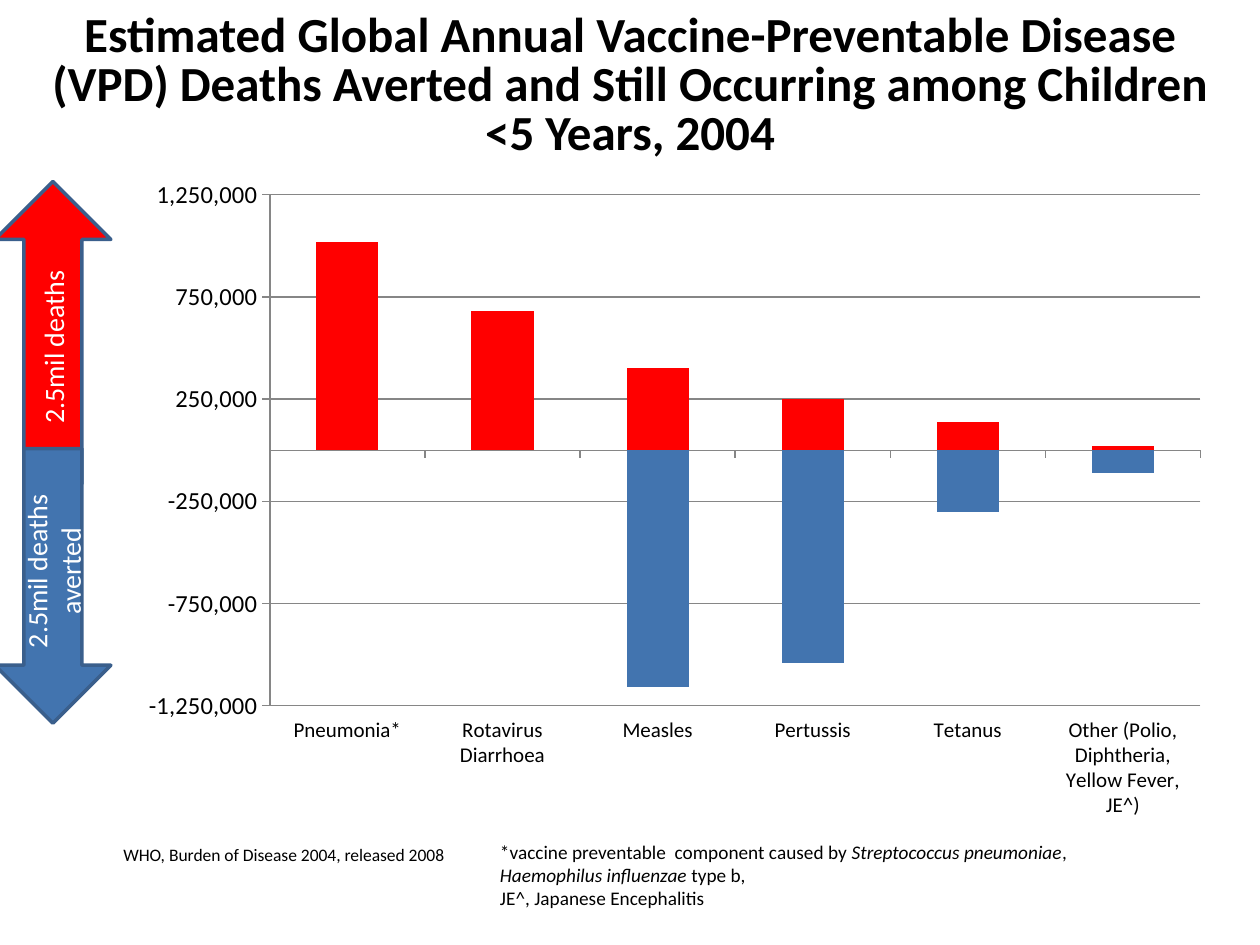
from lxml import etree
from pptx import Presentation
from pptx.chart.data import CategoryChartData
from pptx.dml.color import RGBColor
from pptx.enum.chart import XL_CHART_TYPE, XL_TICK_LABEL_POSITION, XL_TICK_MARK
from pptx.enum.shapes import MSO_SHAPE
from pptx.enum.text import MSO_ANCHOR, PP_ALIGN
from pptx.oxml.ns import qn
from pptx.util import Inches, Pt

STACKED = XL_CHART_TYPE.COLUMN_STACKED
LOW = XL_TICK_LABEL_POSITION.LOW
OUT, NONE = XL_TICK_MARK.OUTSIDE, XL_TICK_MARK.NONE
ARROW = MSO_SHAPE.DOWN_ARROW
MIDDLE, TOP = MSO_ANCHOR.MIDDLE, MSO_ANCHOR.TOP
CENTER, LEFT = PP_ALIGN.CENTER, PP_ALIGN.LEFT

FONT = "Calibri"
BLACK, WHITE, RED, BLUE = "000000", "FFFFFF", "FF0000", "4274AF"
EDGE, GRID = "3A5F8C", "868686"

CAUSES = ["Pneumonia*", "Rotavirus Diarrhoea", "Measles", "Pertussis",
          "Tetanus", "Other (Polio, Diphtheria, Yellow Fever, JE^)"]
SERIES = [
    ("Still occurring", RED, (1020000, 680000, 400000, 250000, 140000, 20000)),
    ("Averted", BLUE, (0, 0, -1160000, -1040000, -300000, -110000)),
]


def color(code):
    return RGBColor.from_string(code)


def place(shape, box):
    shape.left, shape.top, shape.width, shape.height = map(Inches, box)


def style(font, size, code=BLACK, bold=False, italic=False):
    font.name, font.size = FONT, Pt(size)
    font.bold, font.italic = bold, italic
    font.color.rgb = color(code)


def write(shape, text, size=11, code=BLACK, bold=False, align=LEFT,
          anchor=TOP, space=None):
    frame = shape.text_frame
    frame.word_wrap = True
    frame.vertical_anchor = anchor
    for row, line in enumerate(text.split("\n")):
        para = frame.add_paragraph() if row else frame.paragraphs[0]
        para.alignment = align
        if space:
            para.line_spacing = Pt(space)
        for part, words in enumerate(line.split("_")):
            run = para.add_run()
            run.text = words
            style(run.font, size, code, bold, part % 2 == 1)


def add_title(slide, box):
    title = slide.shapes.title
    place(title, box)
    write(title, "Estimated Global Annual Vaccine-Preventable Disease (VPD) "
          "Deaths Averted and Still Occurring among Children <5 Years, 2004",
          size=28, bold=True, align=CENTER, anchor=MIDDLE, space=28)


def set_plot(chart, box):
    plot = chart.element.find(".//" + qn("c:plotArea"))
    for old in plot.findall(qn("c:layout")):
        plot.remove(old)
    layout = etree.Element(qn("c:layout"))
    manual = etree.SubElement(layout, qn("c:manualLayout"))
    pairs = [("layoutTarget", "inner"), ("xMode", "edge"), ("yMode", "edge")]
    for key, val in pairs + list(zip("xywh", box)):
        etree.SubElement(manual, qn("c:" + key)).set("val", str(val))
    plot.insert(0, layout)


def set_axis(axis, size):
    style(axis.tick_labels.font, size)
    axis.major_tick_mark, axis.minor_tick_mark = OUT, NONE
    axis.format.line.color.rgb = color(GRID)
    axis.format.line.width = Pt(0.75)


def add_bars(slide, box):
    data = CategoryChartData(number_format="#,##0")
    data.categories = CAUSES
    for name, _, vals in SERIES:
        data.add_series(name, vals)
    chart = slide.shapes.add_chart(STACKED, *map(Inches, box), data).chart
    chart.has_legend = chart.has_title = False
    style(chart.font, 18)
    plot = chart.plots[0]
    plot.gap_width, plot.overlap = 150, 100
    plot.vary_by_categories = False
    for bars, (_, code, _) in zip(plot.series, SERIES):
        bars.invert_if_negative = False
        bars.format.fill.solid()
        bars.format.fill.fore_color.rgb = color(code)
    cats, vals = chart.category_axis, chart.value_axis
    set_axis(cats, 12)
    cats.tick_label_position = LOW
    set_axis(vals, 14)
    vals.minimum_scale, vals.maximum_scale = -1250000, 1250000
    vals.major_unit = 500000
    vals.tick_labels.number_format = "#,##0"
    vals.tick_labels.number_format_is_linked = False
    vals.has_major_gridlines = True
    vals.major_gridlines.format.line.color.rgb = color(GRID)
    vals.major_gridlines.format.line.width = Pt(0.75)
    set_plot(chart, (0.165, 0.033, 0.828, 0.722))


def add_arrow(slide, box, text, code, turn, flow):
    arrow = slide.shapes.add_shape(ARROW, *map(Inches, box))
    arrow.rotation = turn
    arrow.shadow.inherit = False
    arrow.fill.solid()
    arrow.fill.fore_color.rgb = color(code)
    arrow.line.color.rgb = color(EDGE)
    arrow.line.width = Pt(2)
    write(arrow, text, size=16, code=WHITE, align=CENTER, anchor=MIDDLE)
    arrow.element.find(".//" + qn("a:bodyPr")).set("vert", flow)


def add_note(slide, box, text, size):
    write(slide.shapes.add_textbox(*map(Inches, box)), text, size=size)


def main():
    deck = Presentation()
    deck.slide_width, deck.slide_height = Inches(10), Inches(7.5)
    slide = deck.slides.add_slide(deck.slide_layouts[5])
    add_bars(slide, (0.67, 1.36, 8.92, 5.62))
    add_arrow(slide, (-0.04, 1.44, 0.92, 2.4), "2.5mil deaths",
              RED, 180, "vert")
    add_arrow(slide, (-0.04, 3.56, 0.92, 2.18), "2.5mil deaths averted",
              BLUE, 0, "vert270")
    add_note(slide, (0.88, 6.65, 3.11, 0.27),
             "WHO, Burden of Disease 2004, released 2008", 10)
    add_note(slide, (3.87, 6.62, 4.87, 0.66),
             "*vaccine preventable  component caused by "
             "_Streptococcus pneumoniae_, _Haemophilus influenzae_ type b,\n"
             "JE^, Japanese Encephalitis", 11)
    add_title(slide, (0.25, 0.3, 9.5, 0.78))
    deck.save("out.pptx")


if __name__ == "__main__":
    main()
